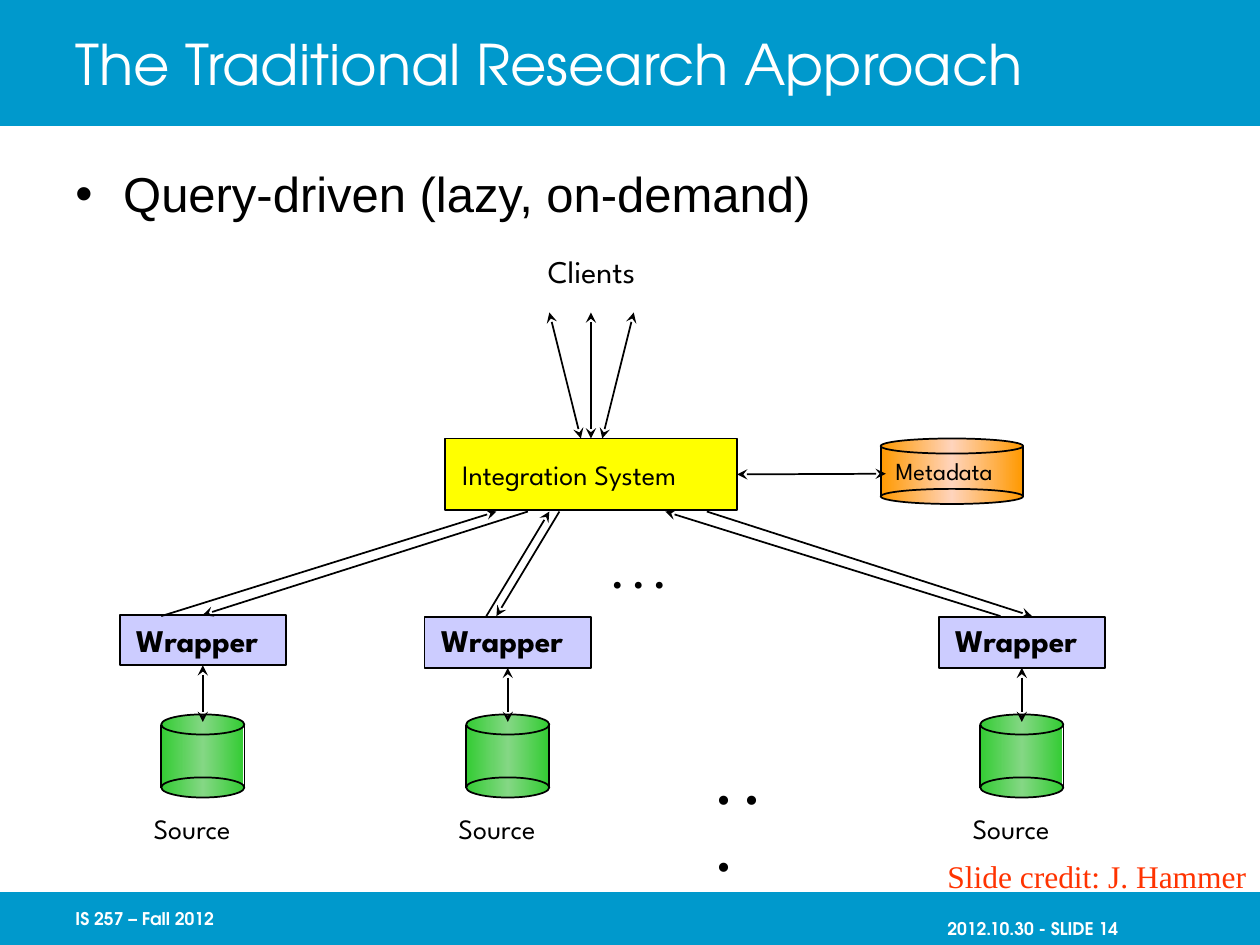
from lxml import etree
from pptx import Presentation, util as u
from pptx.dml.color import RGBColor
from pptx.enum import shapes, text
from pptx.oxml import ns

BLACK, WHITE, BLUE = "000000", "FFFFFF", "0099CC"
LILAC, YELLOW, RED = "CCCCFF", "FFFF00", "FF3300"
GREENS = ("33CC33", "84D784", "33CC33")
ORANGES = ("FF9900", "FFD4BC", "FF9900")
SPARTAN, ADVENTOR = "League Spartan", "TeX Gyre Adventor"
ARIAL, TIMES = "Arial", "Times New Roman"
RECT, OVAL = shapes.MSO_SHAPE.RECTANGLE, shapes.MSO_SHAPE.OVAL
TOP, MIDDLE, BOTTOM = (text.MSO_ANCHOR.TOP, text.MSO_ANCHOR.MIDDLE,
                       text.MSO_ANCHOR.BOTTOM)


def color(value):
    return RGBColor.from_string(value)


def child(parent, tag, **attrs):
    return etree.SubElement(parent, ns.qn(tag), attrs)


class Deck:
    def __init__(self, width, height):
        self.prs = Presentation()
        self.prs.slide_width = u.Inches(width)
        self.prs.slide_height = u.Inches(height)
        self.s = self.prs.slides.add_slide(self.prs.slide_layouts[6])

    def shape(self, kind, x, y, w, h, fill, line=None, parent=None):
        owner = parent or self.s
        sp = owner.shapes.add_shape(kind, *map(u.Inches, (x, y, w, h)))
        sp.shadow.inherit = False
        if isinstance(fill, str):
            sp.fill.solid()
            sp.fill.fore_color.rgb = color(fill)
        else:
            self.gradient(sp, fill)
        if line:
            sp.line.color.rgb = color(line)
            sp.line.width = u.Pt(1)
        else:
            sp.line.fill.background()
        return sp

    def gradient(self, sp, stops):
        sp.fill.gradient()
        sp.fill.gradient_angle = 0
        stop_list = sp._element.spPr.find(".//" + ns.qn("a:gsLst"))
        for old in list(stop_list):
            stop_list.remove(old)
        for i, value in enumerate(stops):
            stop = child(stop_list, "a:gs", pos=str(i * 50000))
            child(stop, "a:srgbClr", val=value)

    def line(self, x1, y1, x2, y2, head=False, tail=False, parent=None):
        owner = parent or self.s
        c = owner.shapes.add_connector(shapes.MSO_CONNECTOR.STRAIGHT,
                                       *map(u.Inches, (x1, y1, x2, y2)))
        c.line.color.rgb = color(BLACK)
        c.line.width = u.Pt(1)
        ln = c.line._get_or_add_ln()
        for tag, wanted in (("a:headEnd", head), ("a:tailEnd", tail)):
            if wanted:
                child(ln, tag, type="stealth")
        child(c._element.spPr, "a:effectLst")
        return c

    def text(self, x, y, w, h, words, size, font=SPARTAN, ink=BLACK,
             bold=False, anchor=TOP, right=0.1, bullet=False):
        tb = self.s.shapes.add_textbox(*map(u.Inches, (x, y, w, h)))
        tf = tb.text_frame
        tf.word_wrap = True
        tf.vertical_anchor = anchor
        tf.margin_right = u.Inches(right)
        p = tf.paragraphs[0]
        if bullet:
            pPr = p._p.get_or_add_pPr()
            pPr.set("marL", str(u.Inches(0.38)))
            pPr.set("indent", str(u.Inches(-0.38)))
            child(pPr, "a:buFont", typeface=ARIAL)
            child(pPr, "a:buChar", char="•")
        r = p.add_run()
        r.text = words
        r.font.name = font
        r.font.size = u.Pt(size)
        r.font.bold = bold
        r.font.color.rgb = color(ink)

    def cylinder(self, x, y, w, h, cap, stops):
        group = self.s.shapes.add_group_shape()
        top, bottom = y + cap / 2, y + h - cap / 2
        self.shape(RECT, x, top, w, bottom - top, stops, WHITE, group)
        for side in (x, x + w):
            self.line(side, top, side, bottom, parent=group)
        for cap_top in (y, y + h - cap):
            self.shape(OVAL, x, cap_top, w, cap, stops, BLACK, group)


def main():
    deck = Deck(10, 7.5)
    deck.shape(RECT, 0, 0, 10, 1, BLUE)
    deck.shape(RECT, 0, 7.08, 10, 0.42, BLUE)
    deck.text(0.5, 0, 8.5, 1, "The Traditional Research Approach", 32,
              ADVENTOR, WHITE, anchor=MIDDLE)
    deck.text(0.5, 1.25, 8.5, 0.75, "Query-driven (lazy, on-demand)", 28,
              ARIAL, bullet=True)
    deck.text(0.5, 7.08, 2.08, 0.42, "IS 257 – Fall 2012", 10,
              ADVENTOR, WHITE, True, MIDDLE)
    deck.text(7.42, 7.08, 2.08, 0.42, "2012.10.30 - SLIDE 14", 10,
              ADVENTOR, WHITE, True, BOTTOM)

    wrappers = []
    for center, top in ((1.61, 4.88), (4.03, 4.9), (8.11, 4.9)):
        deck.cylinder(center - 0.33, 5.67, 0.66, 0.66, 0.16, GREENS)
        deck.text(center - 0.49, 6.39, 0.98, 0.37, "Source", 16)
        wrapper = deck.shape(RECT, center - 0.66, top, 1.32, 0.4, LILAC, BLACK)
        deck.text(center - 0.63, 4.88, 1.26, 0.4, "Wrapper", 18, bold=True)
        link = deck.line(center, top + 0.4, center, 5.73, head=True, tail=True)
        link.begin_connect(wrapper, 2)
        wrappers.append(wrapper)

    system = deck.shape(RECT, 3.53, 3.48, 2.32, 0.57, YELLOW, BLACK)
    deck.text(3.57, 3.58, 2.24, 0.37, "Integration System", 16)

    for wrapper_x, system_x in ((1.28, 3.94), (3.86, 4.36), (7.94, 5.28)):
        deck.line(wrapper_x, 4.89, system_x, 4.06, tail=True)
    queries = [deck.line(system_x, 4.06, wrapper_x, 4.89, tail=True)
               for system_x, wrapper_x in
               ((4.19, 1.61), (4.44, 3.94), (5.61, 8.19))]
    queries[0].end_connect(wrappers[0], 0)

    deck.cylinder(6.99, 3.48, 1.13, 0.52, 0.12, ORANGES)
    deck.text(7.01, 3.57, 1.09, 0.33, "Metadata", 14)
    lookup = deck.line(5.85, 3.76, 7.03, 3.76, head=True, tail=True)
    lookup.begin_connect(system, 3)

    deck.text(4.25, 1.95, 1.05, 0.4, "Clients", 18)
    clients = [deck.line(client_x, 2.48, system_x, 3.48, head=True, tail=True)
               for client_x, system_x in
               ((4.36, 4.61), (4.69, 4.69), (5.03, 4.78))]
    clients[1].end_connect(system, 0)

    deck.text(4.76, 4.29, 0.62, 0.5, ". . .", 24, TIMES, bold=True, right=0.05)
    deck.text(5.59, 5.89, 0.76, 0.63, ". . .", 32, TIMES, bold=True, right=0.14)
    deck.text(7.42, 6.75, 2.58, 0.4, "Slide credit: J. Hammer", 18,
              TIMES, RED, right=0.05)
    deck.prs.save("out.pptx")


if __name__ == "__main__":
    main()
